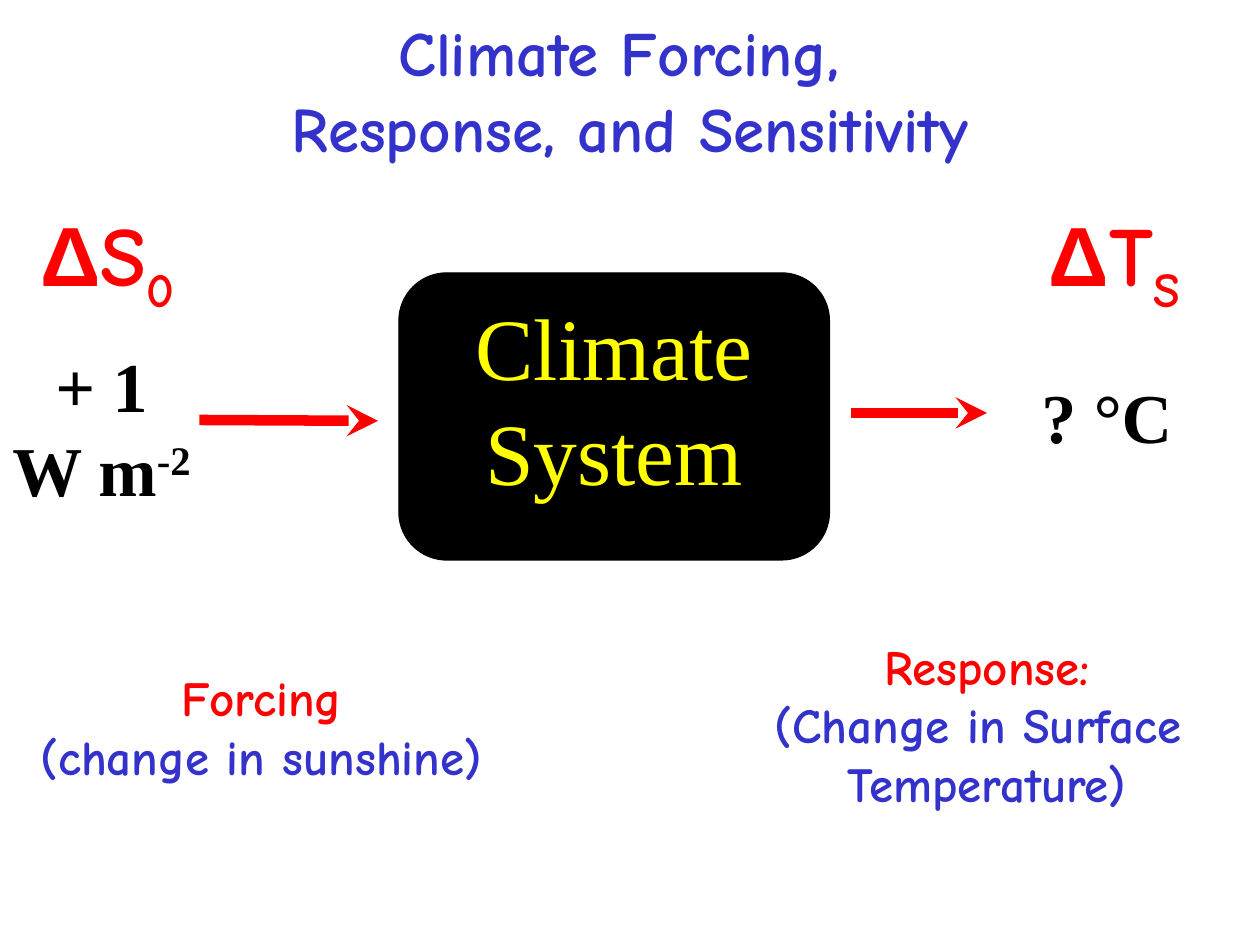
from dataclasses import dataclass

import pptx
import pptx.dml.color
import pptx.enum.dml
import pptx.enum.shapes
import pptx.enum.text
import pptx.oxml
import pptx.oxml.ns
import pptx.util

Pt = pptx.util.Pt
RGBColor = pptx.dml.color.RGBColor
PP_ALIGN = pptx.enum.text.PP_ALIGN
MSO_ANCHOR = pptx.enum.text.MSO_ANCHOR
MSO_AUTO_SIZE = pptx.enum.text.MSO_AUTO_SIZE

BLACK = RGBColor(0x00, 0x00, 0x00)
RED = RGBColor(0xFF, 0x00, 0x00)
BLUE = RGBColor(0x33, 0x33, 0xCC)
YELLOW = RGBColor(0xFF, 0xFF, 0x00)
COMIC, TIMES, ARIAL = "Comic Neue", "Times New Roman", "Arial"
LINE_SPACING = 1.2  # line pitch as a multiple of the text size


@dataclass
class Run:
    text: str
    font: str
    color: RGBColor
    bold: bool = True
    baseline: int = 0  # percent raised (+) or lowered (-)


@dataclass
class Label:
    box: tuple[float, float, float, float]
    size: float
    paragraphs: list[list[Run]]
    align: PP_ALIGN = PP_ALIGN.CENTER


@dataclass
class Arrow:
    start: tuple[float, float]
    end: tuple[float, float]


def add_run(paragraph, run: Run, size: float) -> None:
    """Add one format run, with a line break at each newline."""
    for index, line in enumerate(run.text.split("\n")):
        if index:
            paragraph.add_line_break()
        text_run = paragraph.add_run()
        text_run.text = line
        formats = {"name": run.font, "size": Pt(size), "bold": run.bold}
        for name, value in formats.items():
            setattr(text_run.font, name, value)
        text_run.font.color.rgb = run.color
        if run.baseline:
            text_run.font._element.set("baseline", str(run.baseline * 1000))


def write_text(frame, label: Label) -> None:
    for index, runs in enumerate(label.paragraphs):
        paragraph = frame.add_paragraph() if index else frame.paragraphs[0]
        paragraph.alignment = label.align
        paragraph.line_spacing = Pt(label.size * LINE_SPACING)
        for run in runs:
            add_run(paragraph, run, label.size)


def format_frame(frame, wrap: bool, anchor: MSO_ANCHOR, auto_size: MSO_AUTO_SIZE) -> None:
    formats = {"word_wrap": wrap, "vertical_anchor": anchor, "auto_size": auto_size}
    for name, value in formats.items():
        setattr(frame, name, value)


def add_title(slide, label: Label) -> None:
    title = slide.shapes.title
    for name, value in zip(("left", "top", "width", "height"), label.box):
        setattr(title, name, Pt(value))
    format_frame(title.text_frame, True, MSO_ANCHOR.MIDDLE, MSO_AUTO_SIZE.NONE)
    write_text(title.text_frame, label)


def add_label(slide, label: Label) -> None:
    shape = slide.shapes.add_textbox(*map(Pt, label.box))
    format_frame(shape.text_frame, False, MSO_ANCHOR.TOP, MSO_AUTO_SIZE.SHAPE_TO_FIT_TEXT)
    write_text(shape.text_frame, label)


def add_system(slide, label: Label) -> None:
    shape = slide.shapes.add_shape(
        pptx.enum.shapes.MSO_SHAPE.ROUNDED_RECTANGLE, *map(Pt, label.box))
    shape.shadow.inherit = False
    shape.fill.solid()
    shape.fill.fore_color.rgb = BLACK
    shape.line.color.rgb = BLACK
    shape.line.width = Pt(0.75)
    format_frame(shape.text_frame, True, MSO_ANCHOR.TOP, MSO_AUTO_SIZE.NONE)
    write_text(shape.text_frame, label)


def add_arrow(slide, arrow: Arrow) -> None:
    connector = slide.shapes.add_connector(
        pptx.enum.shapes.MSO_CONNECTOR.STRAIGHT, *map(Pt, arrow.start + arrow.end))
    connector.line.color.rgb = RED
    connector.line.width = Pt(6)
    line = connector.line._get_or_add_ln()
    namespace = pptx.oxml.ns.nsdecls("a")
    line.append(pptx.oxml.parse_xml(f'<a:tailEnd {namespace} type="stealth"/>'))
    line.getparent().append(pptx.oxml.parse_xml(f"<a:effectLst {namespace}/>"))


def symbol(letter: str, subscript: str) -> list[list[Run]]:
    """A delta symbol such as ΔS with its subscript."""
    return [[Run("Δ", ARIAL, RED), Run(letter, COMIC, RED),
             Run(subscript, COMIC, RED, baseline=-25)]]


def caption(heading: str, detail: str) -> list[list[Run]]:
    return [[Run(heading, COMIC, RED)], [Run(detail, COMIC, BLUE)]]


TITLE = Label((42, 0, 636, 102), 36,
              [[Run("Climate Forcing, \nResponse, and Sensitivity", COMIC, BLUE)]])
SYSTEM = Label((228, 156, 246, 164), 50,
               [[Run("Climate System", TIMES, YELLOW, bold=False)]])
LABELS = [
    # Captions
    Label((6, 378, 286.5, 75), 28, caption("Forcing", "(change in sunshine)")),
    Label((426, 360, 276, 108.5), 28,
          caption("Response:", "(Change in Surface \nTemperature)")),
    # Input and output values
    Label((-2, 192, 120, 104.5), 40,
          [[Run("+ 1\nW m", TIMES, BLACK), Run("-2", TIMES, BLACK, baseline=30)]]),
    Label((588, 210, 90, 55.5), 40, [[Run("? °C", TIMES, BLACK)]], PP_ALIGN.LEFT),
    # Symbols
    Label((10, 120, 103, 65.5), 48, symbol("S", "0")),
    Label((584.5, 120, 104.5, 65.5), 48, symbol("T", "S")),
]
ARROWS = [Arrow((114, 240), (216, 240.5)), Arrow((486, 236), (564, 236))]


def main() -> None:
    presentation = pptx.Presentation()
    presentation.slide_width, presentation.slide_height = Pt(720), Pt(540)
    slide = presentation.slides.add_slide(presentation.slide_layouts[5])
    add_title(slide, TITLE)
    add_system(slide, SYSTEM)
    for label in LABELS:
        add_label(slide, label)
    for arrow in ARROWS:
        add_arrow(slide, arrow)
    presentation.save("out.pptx")


if __name__ == "__main__":
    main()
